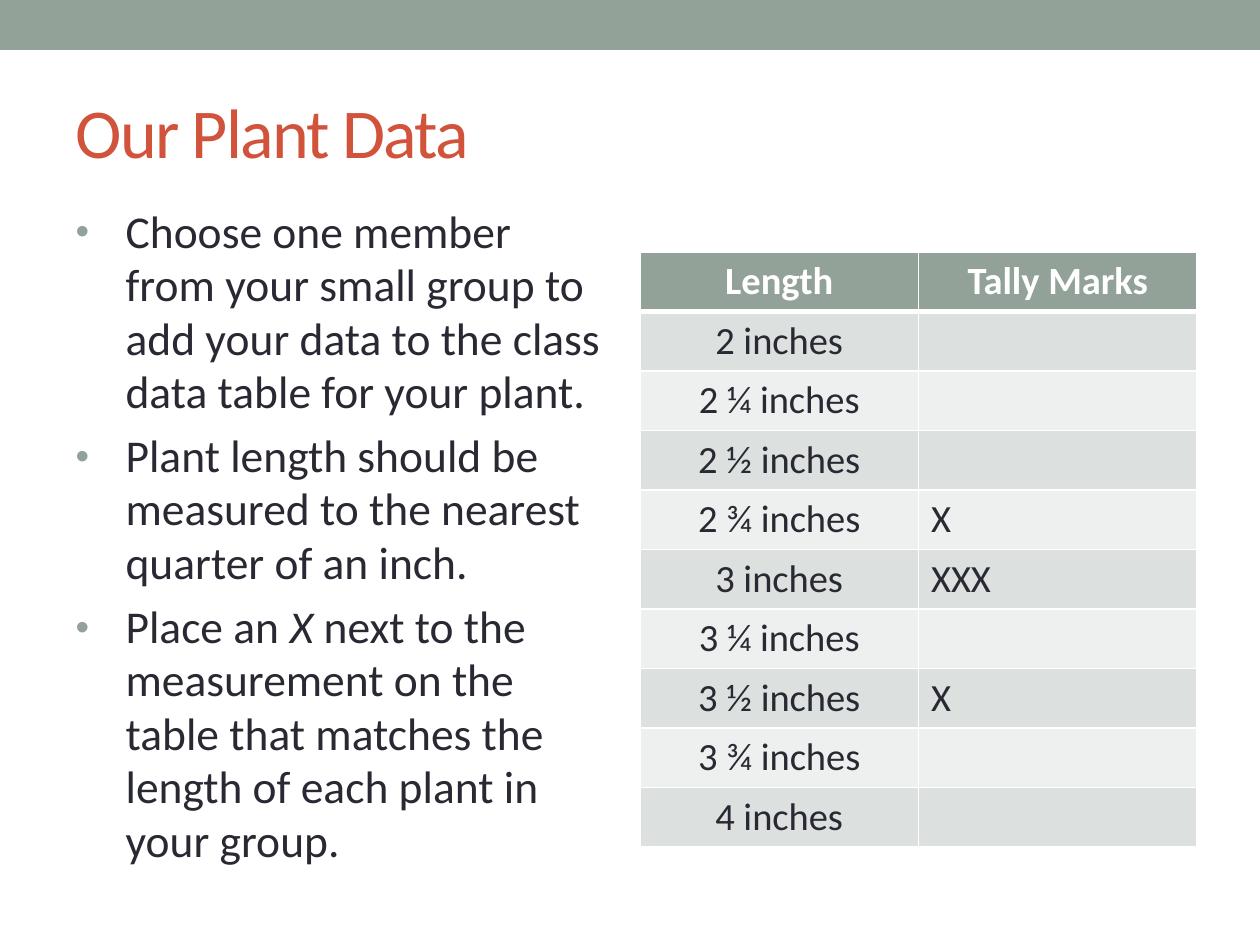
"""Build the plant data slide: title, instructions and tally table."""
from dataclasses import dataclass

from pptx import Presentation
from pptx import util as u
from pptx.dml import color
from pptx.enum import shapes, text
from pptx.oxml import ns
from lxml import etree

SCALE = 914400 / 126


@dataclass(frozen=True)
class Theme:
    font: str = "Calibri"
    sage: str = "93A299"
    red: str = "D2533C"
    ink: str = "292934"
    white: str = "FFFFFF"
    bands: tuple[str, str] = ("DCE0DE", "EEF0EF")
    title_size: int = 40
    body_size: int = 26
    table_size: int = 22


@dataclass(frozen=True)
class Box:
    left: int
    top: int
    width: int
    height: int

    def emu(self) -> tuple[int, ...]:
        return tuple(px(n) for n in (self.left, self.top, self.width, self.height))


@dataclass(frozen=True)
class Span:
    words: str
    italic: bool = False


@dataclass(frozen=True)
class TallyRow:
    length: str
    marks: str = ""


THEME = Theme()
BAR = Box(0, 0, 1260, 50)
TITLE = Box(63, 63, 1134, 136)
BODY = Box(63, 199, 557, 703)
TABLE = Box(640, 252, 557, 590)
BULLETS = [
    [Span("Choose one member from your small group to add your data to the class data table for your plant.")],
    [Span("Plant length should be measured to the nearest quarter of an inch.")],
    [Span("Place an "), Span("X", italic=True),
     Span(" next to the measurement on the table that matches the length of each plant in your group.")],
]
HEADER = TallyRow("Length", "Tally Marks")
ROWS = [
    TallyRow("2 inches"), TallyRow("2 ¼ inches"), TallyRow("2 ½ inches"),
    TallyRow("2 ¾ inches", "X"), TallyRow("3 inches", "XXX"), TallyRow("3 ¼ inches"),
    TallyRow("3 ½ inches", "X"), TallyRow("3 ¾ inches"), TallyRow("4 inches"),
]


def px(length: int) -> int:
    return round(length * SCALE)


def rgb(value: str) -> color.RGBColor:
    return color.RGBColor.from_string(value)


def add_span(para, words: str, size: int, ink: str, bold: bool = False, italic: bool = False):
    span = para.add_run()
    span.text = words
    font = span.font
    font.name, font.size, font.bold, font.italic = THEME.font, u.Pt(size), bold, italic
    font.color.rgb = rgb(ink)
    return span


def place(holder, box: Box, anchor):
    holder.left, holder.top, holder.width, holder.height = box.emu()
    frame = holder.text_frame
    frame.word_wrap = True
    frame.auto_size = text.MSO_AUTO_SIZE.NONE
    frame.vertical_anchor = anchor
    return frame


def add_bar(page) -> None:
    bar = page.shapes.add_shape(shapes.MSO_SHAPE.RECTANGLE, *BAR.emu())
    bar.shadow.inherit = False
    bar.fill.solid()
    bar.fill.fore_color.rgb = rgb(THEME.sage)
    bar.line.fill.background()


def fill_title(holder) -> None:
    para = place(holder, TITLE, text.MSO_ANCHOR.MIDDLE).paragraphs[0]
    para.alignment = text.PP_ALIGN.LEFT
    span = add_span(para, "Our Plant Data", THEME.title_size, THEME.red)
    span.font._element.set("spc", "-100")


def set_bullet(para) -> None:
    props = para._p.get_or_add_pPr()
    props.set("marL", str(px(50)))
    props.set("indent", str(-px(50)))
    tint = etree.SubElement(props, ns.qn("a:buClr"))
    etree.SubElement(tint, ns.qn("a:srgbClr"), val=THEME.sage)
    etree.SubElement(props, ns.qn("a:buSzPct"), val="85000")
    etree.SubElement(props, ns.qn("a:buFont"), typeface="Arial")
    etree.SubElement(props, ns.qn("a:buChar"), char="•")


def fill_body(holder) -> None:
    frame = place(holder, BODY, text.MSO_ANCHOR.TOP)
    for index, spans in enumerate(BULLETS):
        para = frame.add_paragraph() if index else frame.paragraphs[0]
        para.alignment = text.PP_ALIGN.LEFT
        para.line_spacing = 0.98
        para.space_before = u.Pt(6)
        set_bullet(para)
        for span in spans:
            add_span(para, span.words, THEME.body_size, THEME.ink, italic=span.italic)


def set_borders(cell, top: int, bottom: int) -> None:
    props = cell._tc.get_or_add_tcPr()
    for side, width in (("L", 1), ("R", 1), ("T", top), ("B", bottom)):
        line = etree.SubElement(props, ns.qn(f"a:ln{side}"), w=str(u.Pt(width)))
        solid = etree.SubElement(line, ns.qn("a:solidFill"))
        etree.SubElement(solid, ns.qn("a:srgbClr"), val=THEME.white)


def fill_cell(cell, words: str, row: int, column: int) -> None:
    header = row == 0
    set_borders(cell, top=3 if row == 1 else 1, bottom=3 if header else 1)
    cell.fill.solid()
    cell.fill.fore_color.rgb = rgb(THEME.sage if header else THEME.bands[(row - 1) % 2])
    para = cell.text_frame.paragraphs[0]
    para.alignment = text.PP_ALIGN.CENTER if header or column == 0 else text.PP_ALIGN.LEFT
    if words:
        add_span(para, words, THEME.table_size, THEME.white if header else THEME.ink, bold=header)


def add_tally_table(page) -> None:
    entries = [HEADER, *ROWS]
    table = page.shapes.add_table(len(entries), 2, *TABLE.emu()).table
    for row, entry in enumerate(entries):
        for column, words in enumerate((entry.length, entry.marks)):
            fill_cell(table.cell(row, column), words, row, column)


def main() -> None:
    deck = Presentation()
    deck.slide_width, deck.slide_height = u.Inches(10), u.Inches(7.5)
    page = deck.slides.add_slide(deck.slide_layouts[1])
    add_bar(page)
    fill_title(page.shapes.title)
    fill_body(page.placeholders[1])
    add_tally_table(page)
    deck.save("out.pptx")


if __name__ == "__main__":
    main()
